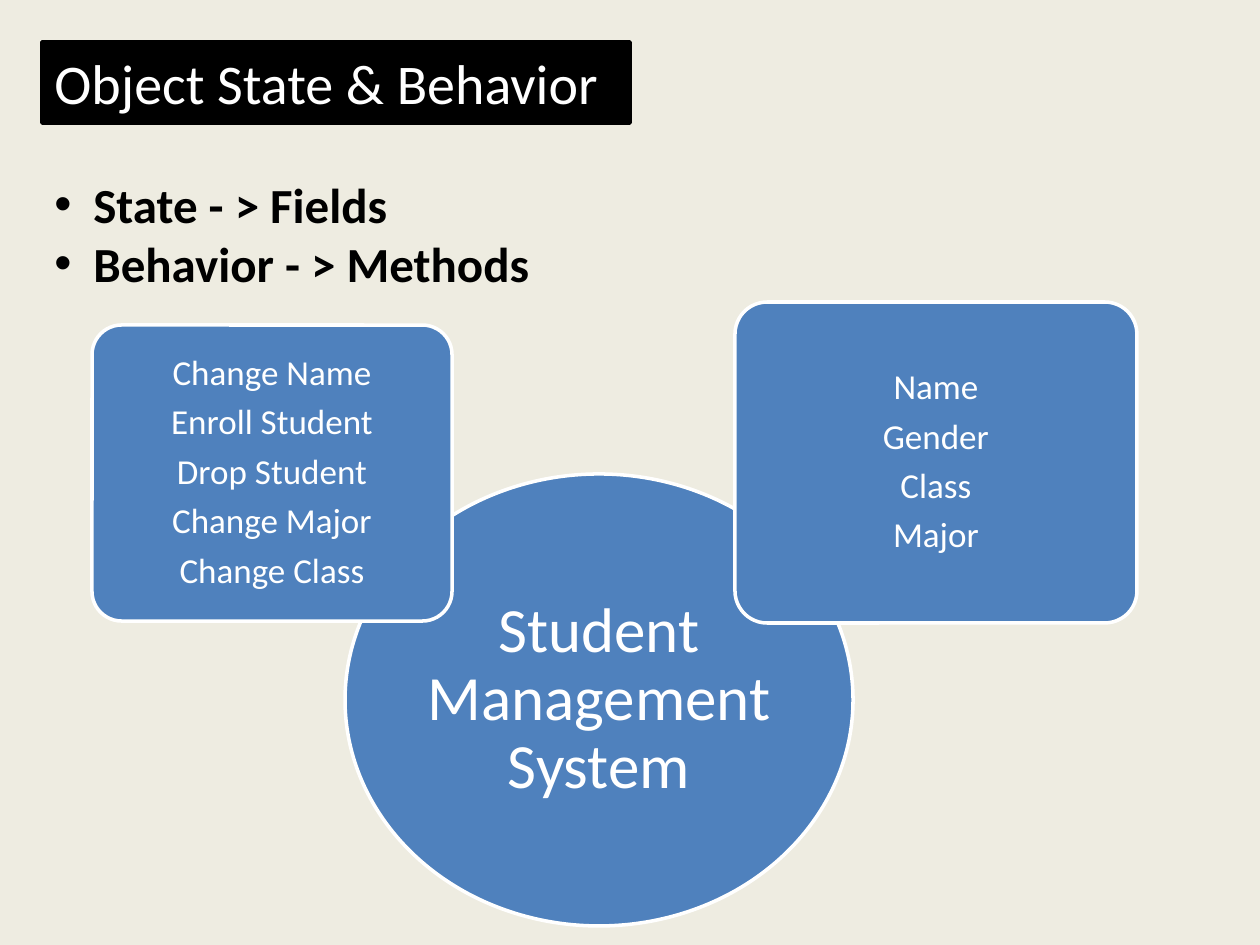
"""Build the Object State & Behavior slide."""
from lxml import etree
from pptx import Presentation
from pptx.dml.color import RGBColor
from pptx.enum.shapes import MSO_SHAPE
from pptx.enum.text import MSO_ANCHOR, PP_ALIGN
from pptx.oxml.ns import qn
from pptx.util import Pt

RECT, OVAL, ROUND = MSO_SHAPE.RECTANGLE, MSO_SHAPE.OVAL, MSO_SHAPE.ROUNDED_RECTANGLE
TOP, MIDDLE = MSO_ANCHOR.TOP, MSO_ANCHOR.MIDDLE
LEFT, CENTER = PP_ALIGN.LEFT, PP_ALIGN.CENTER
BLACK = RGBColor(0x00, 0x00, 0x00)
WHITE = RGBColor(0xFF, 0xFF, 0xFF)
BLUE = RGBColor(0x4F, 0x81, 0xBD)
CREAM = RGBColor(0xEE, 0xEC, 0xE1)
PX = 914400 / 126


def px(n):
    return round(n * PX)


def write(tf, lines, para, size, color, bold=False):
    tf.word_wrap = True
    for i, line in enumerate(lines):
        p = tf.paragraphs[0] if i == 0 else tf.add_paragraph()
        for name, value in para.items():
            setattr(p, name, value)
        r = p.add_run()
        r.text = line
        r.font.color.rgb = color
        for name, value in {"name": "Calibri", "size": Pt(size), "bold": bold}.items():
            setattr(r.font, name, value)


prs = Presentation()
prs.slide_width, prs.slide_height = px(1260), px(945)
s = prs.slides.add_slide(prs.slide_layouts[6])
s.background.fill.solid()
s.background.fill.fore_color.rgb = CREAM

plain = {"alignment": LEFT}
centered = {"alignment": CENTER, "line_spacing": 0.9}
spaced = {**centered, "space_after": Pt(6.6)}
methods = ["Change Name", "Enroll Student", "Drop Student", "Change Major", "Change Class"]
fields = ["Name", "Gender", "Class", "Major"]

shapes = [
    (RECT, (42, 42, 588, 81), BLACK, BLACK, TOP, None, ["Object State & Behavior"], plain, 32),
    (OVAL, (345, 474, 508, 452), BLUE, WHITE, MIDDLE, 4, ["Student Management System"], centered, 36),
    (ROUND, (92, 325, 360, 296), BLUE, WHITE, MIDDLE, 5, methods, spaced, 20),
    (ROUND, (735, 302, 402, 321), BLUE, WHITE, MIDDLE, 5, fields, spaced, 20),
]
for kind, box, fill, line, anchor, inset, lines, para, size in shapes:
    sp = s.shapes.add_shape(kind, *map(px, box))
    sp.shadow.inherit = False
    sp.fill.solid()
    sp.fill.fore_color.rgb = fill
    sp.line.color.rgb = line
    sp.line.width = Pt(2)
    if kind == ROUND:
        sp.adjustments[0] = 0.1
    tf = sp.text_frame
    tf.vertical_anchor = anchor
    if inset:
        for side in ("left", "top", "right", "bottom"):
            setattr(tf, f"margin_{side}", px(inset))
    write(tf, lines, para, size, WHITE)

tf = s.shapes.add_textbox(*map(px, (42, 168, 829, 131))).text_frame
write(tf, ["State - > Fields", "Behavior - > Methods"], plain, 28, BLACK, True)
for p in tf.paragraphs:
    pPr = p._p.get_or_add_pPr()
    pPr.set("marL", str(px(39)))
    pPr.set("indent", str(-px(39)))
    etree.SubElement(pPr, qn("a:buFont"), typeface="Arial")
    etree.SubElement(pPr, qn("a:buChar"), char="•")

prs.save("out.pptx")
